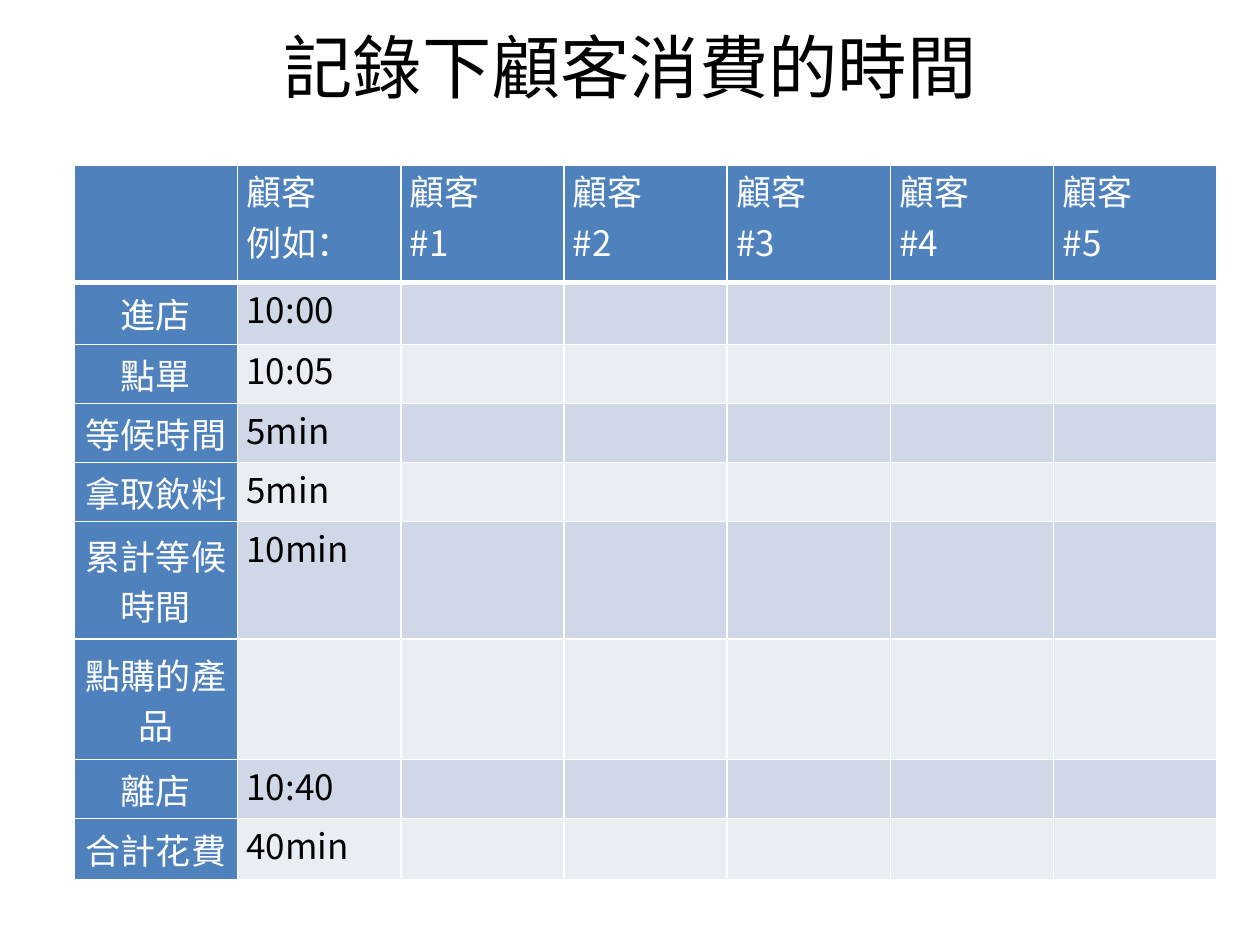
from lxml.etree import SubElement
from pptx import Presentation
from pptx.dml.color import RGBColor
from pptx.enum.text import MSO_ANCHOR, PP_ALIGN
from pptx.oxml.ns import qn
from pptx.util import Cm, Pt

TITLE = "記錄下顧客消費的時間"
HEADERS = ["", "顧客\n例如："] + [f"顧客\n#{number}" for number in range(1, 6)]
# label, example value, row height in cm
STEPS = [
    ("進店", "10:00", 1.24),
    ("點單", "10:05", 1.19),
    ("等候時間", "5min", 1.19),
    ("拿取飲料", "5min", 1.19),
    ("累計等候\n時間", "10min", 2.37),
    ("點購的產品", "", 2.43),
    ("離店", "10:40", 1.19),
    ("合計花費", "40min", 1.24),
]
HEADER_HEIGHT = 2.37
COLUMN_WIDTH = 3.29

FONT = "Noto Sans CJK SC"
BLACK = RGBColor(0x00, 0x00, 0x00)
WHITE = RGBColor(0xFF, 0xFF, 0xFF)
BLUE = RGBColor(0x4F, 0x81, 0xBD)
BANDS = [RGBColor(0xD0, 0xD8, 0xE8), RGBColor(0xE9, 0xED, 0xF4)]


def style_text(frame, size, color, align):
    for para in frame.paragraphs:
        para.alignment = align
        para.font.size = Pt(size)
        para.font.name = FONT
        para.font.color.rgb = color
        properties = para._p.pPr.find(qn("a:defRPr"))
        SubElement(properties, qn("a:ea"), typeface=FONT)


def add_borders(cell, bottom_width):
    """Draw white lines round the cell; call before the fill is set."""
    properties = cell._tc.get_or_add_tcPr()
    for side, width in (("L", 1), ("R", 1), ("T", 1), ("B", bottom_width)):
        line = SubElement(properties, qn(f"a:ln{side}"), w=str(Pt(width)))
        fill = SubElement(line, qn("a:solidFill"))
        SubElement(fill, qn("a:srgbClr"), val=str(WHITE))


def add_title(page):
    box = page.shapes.add_textbox(Cm(1.27), Cm(0.76), Cm(22.86), Cm(3.18))
    frame = box.text_frame
    frame.word_wrap = True
    frame.vertical_anchor = MSO_ANCHOR.MIDDLE
    frame.margin_top, frame.margin_bottom = 0, Cm(2.03)
    frame.text = TITLE
    style_text(frame, 39.6, BLACK, PP_ALIGN.CENTER)


def add_time_table(page):
    blanks = [""] * (len(HEADERS) - 2)
    rows = [HEADERS] + [[label, example] + blanks for label, example, _ in STEPS]
    heights = [HEADER_HEIGHT] + [height for _, _, height in STEPS]
    table = page.shapes.add_table(
        len(rows), len(HEADERS), Cm(1.5), Cm(3.33),
        Cm(COLUMN_WIDTH * len(HEADERS)), Cm(sum(heights)),
    ).table
    table.first_col = True
    for column in table.columns:
        column.width = Cm(COLUMN_WIDTH)
    for row, height in zip(table.rows, heights):
        row.height = Cm(height)

    for row_index, texts in enumerate(rows):
        for column_index, text in enumerate(texts):
            cell = table.cell(row_index, column_index)
            is_header = row_index == 0
            is_label = column_index == 0 and not is_header
            cell.margin_left = cell.margin_right = Cm(0.18)
            cell.margin_top = cell.margin_bottom = 0
            cell.vertical_anchor = MSO_ANCHOR.MIDDLE if is_label else MSO_ANCHOR.TOP
            add_borders(cell, 3 if is_header else 1)
            cell.fill.solid()
            on_blue = is_header or is_label
            cell.fill.fore_color.rgb = BLUE if on_blue else BANDS[(row_index - 1) % 2]
            cell.text_frame.text = text
            style_text(cell.text_frame, 20, WHITE if on_blue else BLACK,
                       PP_ALIGN.CENTER if is_label else PP_ALIGN.LEFT)


def main():
    deck = Presentation()
    deck.slide_width, deck.slide_height = Cm(25.4), Cm(19.05)
    page = deck.slides.add_slide(deck.slide_layouts[6])
    add_title(page)
    add_time_table(page)
    deck.save("out.pptx")


if __name__ == "__main__":
    main()
